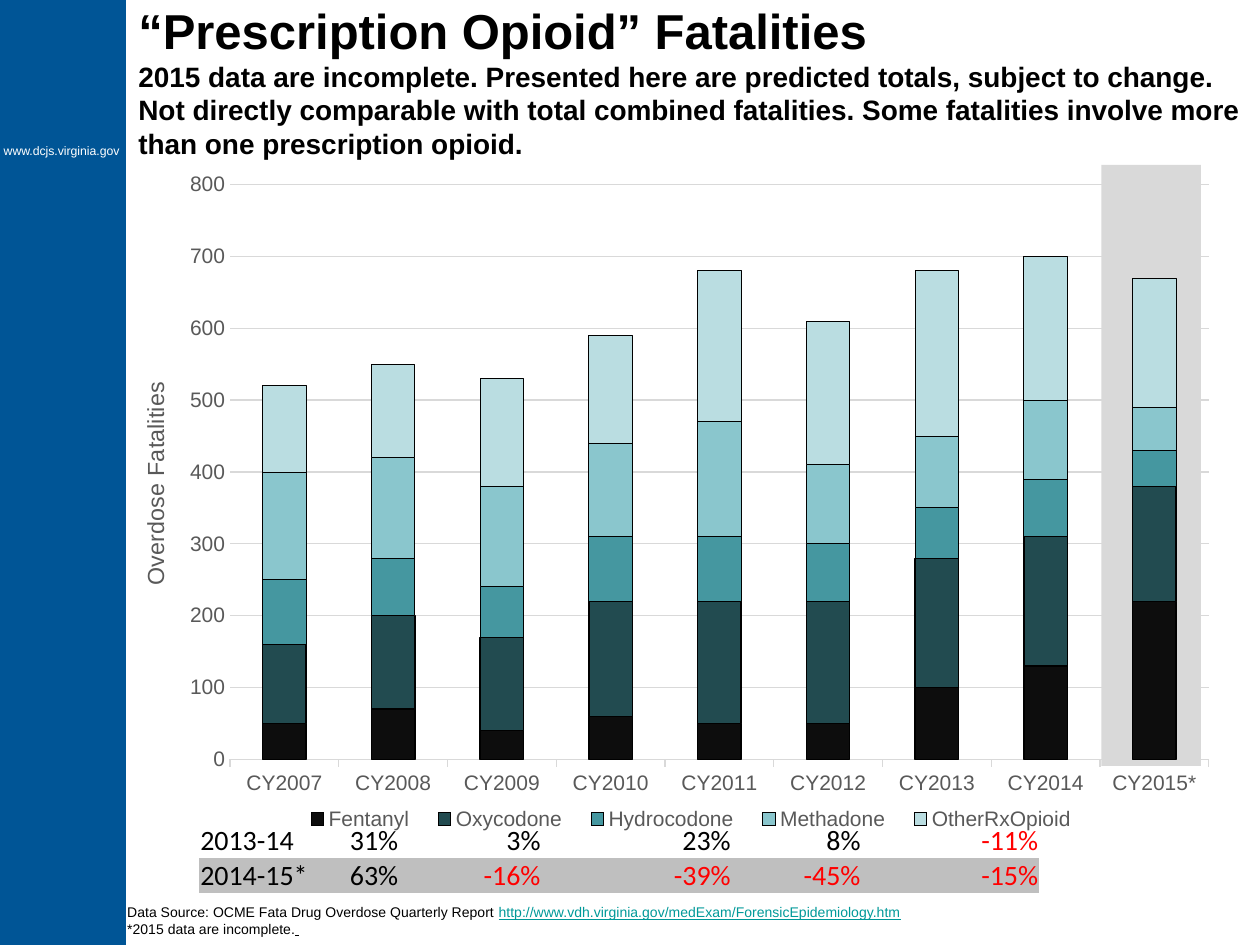
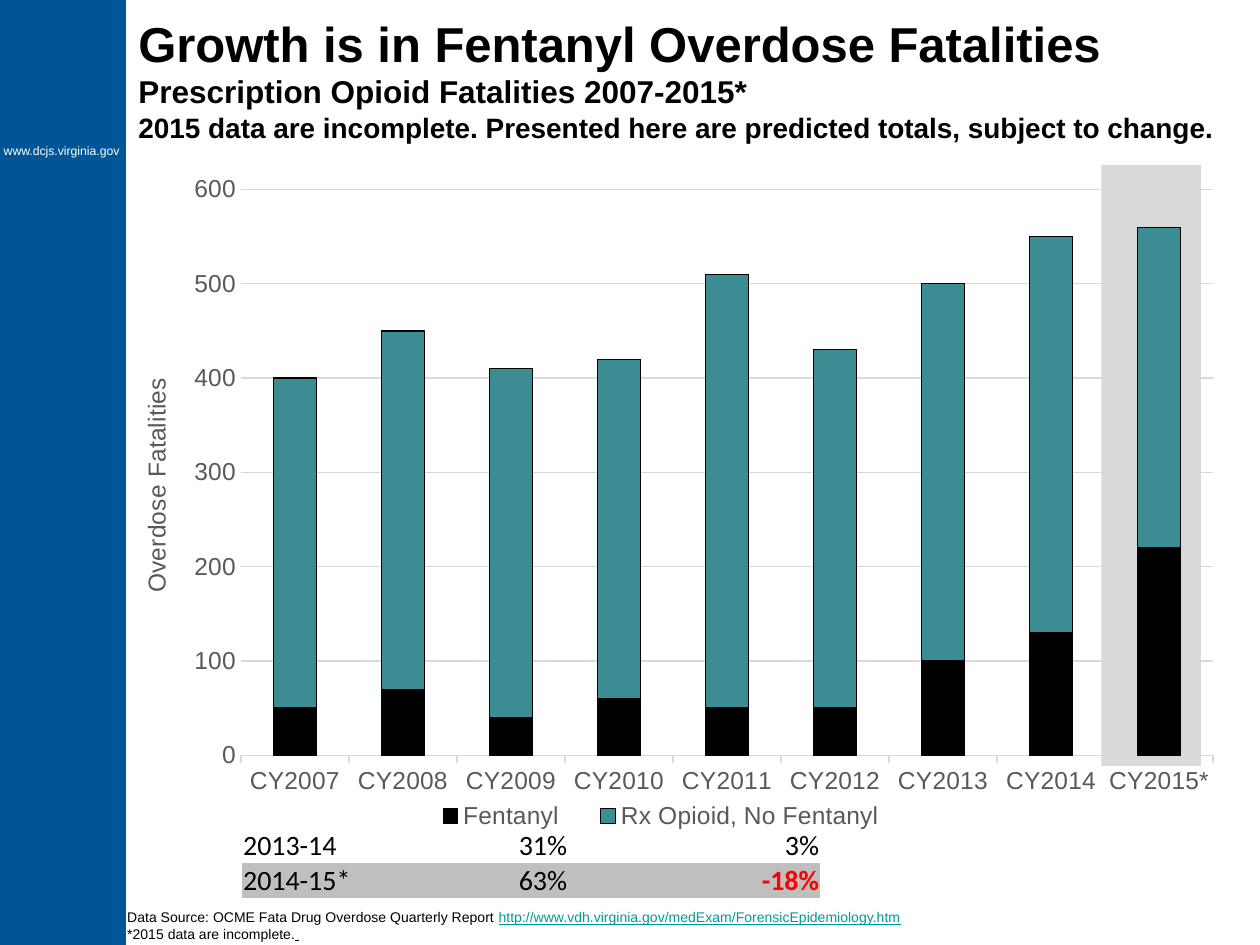
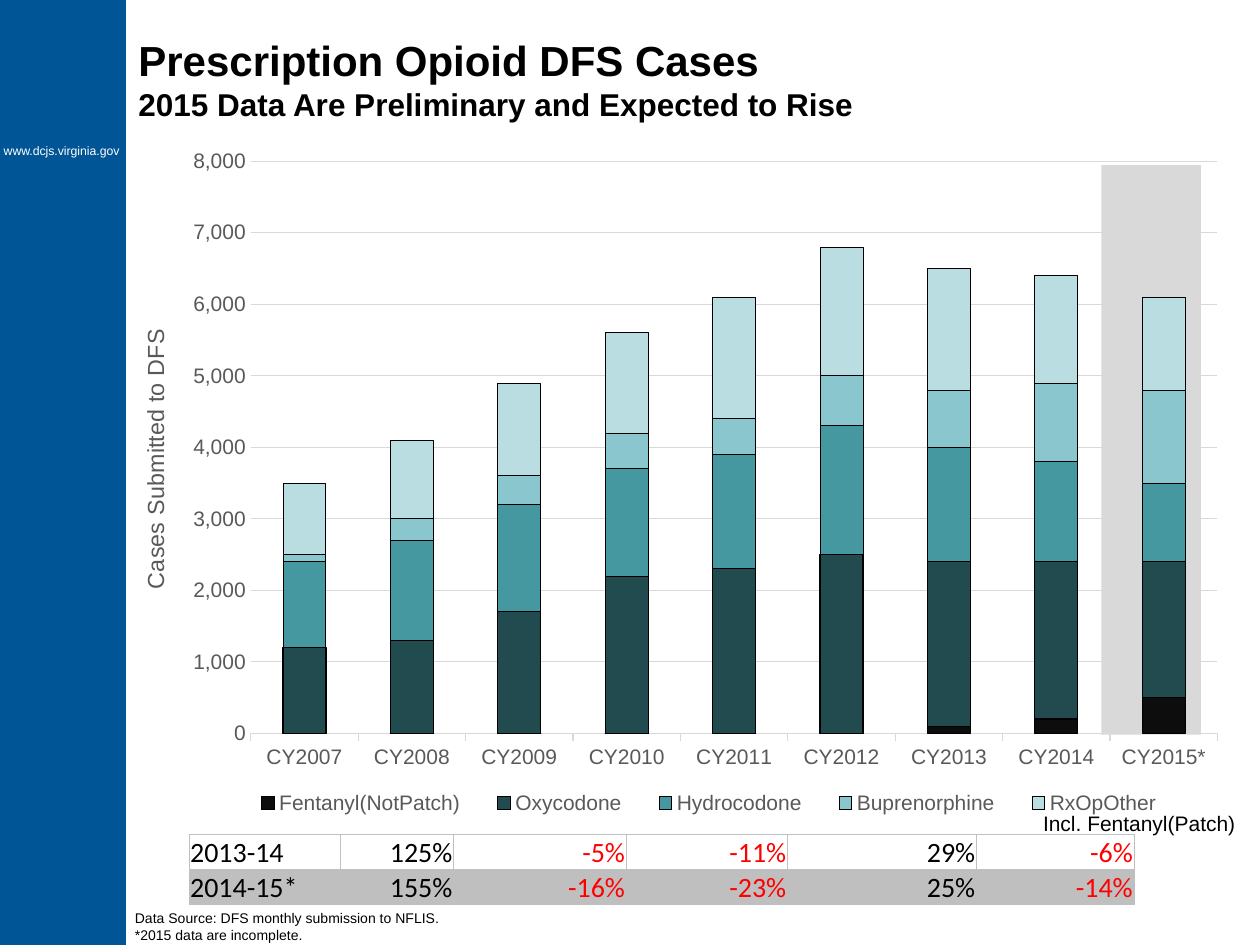
from lxml import etree
from pptx import Presentation
from pptx.chart.data import CategoryChartData
from pptx.dml.color import RGBColor
from pptx.enum.chart import XL_CHART_TYPE, XL_LEGEND_POSITION, XL_TICK_MARK
from pptx.enum.shapes import MSO_SHAPE
from pptx.enum.text import MSO_ANCHOR, PP_ALIGN
from pptx.oxml import parse_xml
from pptx.oxml.ns import nsdecls, qn
from pptx.util import Inches, Pt

STACKED = XL_CHART_TYPE.COLUMN_STACKED
LEGEND_BOTTOM = XL_LEGEND_POSITION.BOTTOM
TICK_NONE, TICK_OUT = XL_TICK_MARK.NONE, XL_TICK_MARK.OUTSIDE
RECTANGLE = MSO_SHAPE.RECTANGLE
TOP, MIDDLE, BOTTOM = MSO_ANCHOR.TOP, MSO_ANCHOR.MIDDLE, MSO_ANCHOR.BOTTOM
LEFT, RIGHT = PP_ALIGN.LEFT, PP_ALIGN.RIGHT

BLACK, WHITE, RED = "000000", "FFFFFF", "FF0000"
BAND_BLUE, LINK_TEAL = "005596", "009999"
HIGHLIGHT_GRAY, ROW_GRAY, BORDER_GRAY, LABEL_GRAY = "D9D9D9", "BFBFBF", "C0C0C0", "595959"
DRUG_COLORS = ["0D0D0D", "224B50", "4597A0", "8AC6CD", "BADDE1"]

YEARS = [f"CY{year}" for year in range(2007, 2015)] + ["CY2015*"]
FENTANYL = [50, 70, 40, 60, 50, 50, 100, 130, 220]
INCOMPLETE = "*2015 data are incomplete."
FATALITY_SOURCE = [
    [("Data Source: OCME Fata Drug Overdose Quarterly Report ", {}),
     ("http://www.vdh.virginia.gov/medExam/ForensicEpidemiology.htm",
      {"color": LINK_TEAL, "underline": True})],
    [(INCOMPLETE, {}), (" ", {"underline": True})],
]
CASE_SOURCE = [[("Data Source: DFS monthly submission to NFLIS.", {})], [(INCOMPLETE, {})]]

SLIDES = [
    {
        "title": [("“Prescription Opioid” Fatalities\n", {"size": 28}),
                  ("2015 data are incomplete. Presented here are predicted totals, subject to change. \n"
                   "Not directly comparable with total combined fatalities. "
                   "Some fatalities involve more than one prescription opioid.", {"size": 16})],
        "title_frame": (1, 0.01, 9, 1.25),
        "highlight_height": 4.77,
        "chart_frame": (1.08, 1.31, 8.67, 5.98),
        "plot": (0.086, 0.026, 0.896, 0.763),
        "legend": (2.29, 6.35, 6.38, 0.3),
        "axis_title": "Overdose Fatalities",
        "label_size": 12, "axis_title_size": 13.3,
        "maximum": 800, "step": 100, "number_format": "0",
        "colors": DRUG_COLORS,
        "series": {
            "Fentanyl": FENTANYL,
            "Oxycodone": [110, 130, 130, 160, 170, 170, 180, 180, 160],
            "Hydrocodone": [90, 80, 70, 90, 90, 80, 70, 80, 50],
            "Methadone": [150, 140, 140, 130, 160, 110, 100, 110, 60],
            "OtherRxOpioid": [120, 130, 150, 150, 210, 200, 230, 200, 180],
        },
        "table_at": (1.58, 6.53),
        "columns": [0.92, 0.67, 1.13, 1.51, 1.03, 1.41],
        "changes": [["2013-14", "31%", "3%", "23%", "8%", "-11%"],
                    ["2014-15*", "63%", "-16%", "-39%", "-45%", "-15%"]],
        "source": FATALITY_SOURCE,
        "source_frame": (1.01, 7.17, 8.53, 0.27),
    },
    {
        "title": [("Growth is in Fentanyl Overdose Fatalities\n", {"size": 28}),
                  ("Prescription Opioid Fatalities 2007-2015*\n", {"size": 18}),
                  ("2015 data are incomplete. Presented here are predicted totals, "
                   "subject to change.", {"size": 16})],
        "title_frame": (1, 0, 9, 1.25),
        "highlight_height": 4.77,
        "chart_frame": (1.08, 1.35, 8.67, 5.94),
        "plot": (0.096, 0.026, 0.89, 0.756),
        "legend": (3.25, 6.33, 4, 0.3),
        "axis_title": "Overdose Fatalities",
        "label_size": 14, "axis_title_size": 14,
        "maximum": 600, "step": 100, "number_format": "0",
        "colors": [BLACK, "3C8C93"],
        "series": {
            "Fentanyl": FENTANYL,
            "Rx Opioid, No Fentanyl": [350, 380, 370, 360, 460, 380, 400, 420, 340],
        },
        "table_at": (1.92, 6.57),
        "columns": [1.38, 1.21, 2],
        "changes": [["2013-14", "31%", "3%"], ["2014-15*", "63%", "-18%"]],
        "bold_change": "-18%",
        "source": FATALITY_SOURCE,
        "source_frame": (1.01, 7.21, 8.53, 0.27),
    },
    {
        "title": [("Prescription Opioid DFS Cases\n", {"size": 24}),
                  ("2015 Data Are Preliminary and Expected to Rise", {"size": 18})],
        "title_frame": (1, 0, 8.75, 1.25),
        "highlight_height": 4.52,
        "chart_frame": (1.08, 1.12, 8.67, 6.17),
        "plot": (0.105, 0.026, 0.885, 0.736),
        "legend": (1.83, 6.22, 7.59, 0.3),
        "axis_title": "Cases Submitted to DFS",
        "label_size": 12, "axis_title_size": 13.3,
        "maximum": 8000, "step": 1000, "number_format": "#,##0",
        "colors": DRUG_COLORS,
        "series": {
            "Fentanyl(NotPatch)": [0, 0, 0, 0, 0, 0, 100, 200, 500],
            "Oxycodone": [1200, 1300, 1700, 2200, 2300, 2500, 2300, 2200, 1900],
            "Hydrocodone": [1200, 1400, 1500, 1500, 1600, 1800, 1600, 1400, 1100],
            "Buprenorphine": [100, 300, 400, 500, 500, 700, 800, 1100, 1300],
            "RxOpOther": [1000, 1100, 1300, 1400, 1700, 1800, 1700, 1500, 1300],
        },
        "table_at": (1.5, 6.62),
        "columns": [1.2, 0.9, 1.37, 1.28, 1.5, 1.25],
        "changes": [["2013-14", "125%", "-5%", "-11%", "29%", "-6%"],
                    ["2014-15*", "155%", "-16%", "-23%", "25%", "-14%"]],
        "border": BORDER_GRAY,
        "legend_note": "Incl. Fentanyl(Patch)",
        "source": CASE_SOURCE,
        "source_frame": (1.07, 7.22, 8.68, 0.19),
    },
]


def rgb(value):
    return RGBColor.from_string(value)


def set_font(font, size=12, color=BLACK, name="Arial", bold=False, underline=False):
    font.name = name
    font.size = Pt(size)
    font.bold = bold
    font.underline = underline
    font.color.rgb = rgb(color)


def write_text(text_frame, paragraphs, align=LEFT, **text_format):
    for index, runs in enumerate(paragraphs):
        paragraph = text_frame.add_paragraph() if index else text_frame.paragraphs[0]
        paragraph.alignment = align
        for text, changes in runs:
            for line_index, line in enumerate(text.split("\n")):
                if line_index:
                    paragraph.add_line_break()
                if line:
                    run = paragraph.add_run()
                    run.text = line
                    set_font(run.font, **{**text_format, **changes})


def add_text_box(slide, frame, paragraphs, padded=False, anchor=TOP, wrap=True, **text_format):
    text_frame = slide.shapes.add_textbox(*map(Inches, frame)).text_frame
    text_frame.word_wrap = wrap
    text_frame.vertical_anchor = anchor
    if not padded:
        text_frame.margin_left = text_frame.margin_right = 0
        text_frame.margin_top = text_frame.margin_bottom = 0
    write_text(text_frame, paragraphs, **text_format)


def add_rectangle(slide, frame, color):
    shape = slide.shapes.add_shape(RECTANGLE, *map(Inches, frame))
    shape.shadow.inherit = False
    shape.fill.solid()
    shape.fill.fore_color.rgb = rgb(color)
    shape.line.fill.background()


def make_layout(fractions, inner=False):
    layout = etree.Element(qn("c:layout"))
    manual = etree.SubElement(layout, qn("c:manualLayout"))
    settings = [("layoutTarget", "inner")] if inner else []
    settings += [("xMode", "edge"), ("yMode", "edge")]
    settings += zip("xywh", fractions)
    for tag, value in settings:
        etree.SubElement(manual, qn(f"c:{tag}")).set("val", str(value))
    return layout


def no_fill_properties():
    return parse_xml(f'<c:spPr {nsdecls("c", "a")}><a:noFill/><a:ln><a:noFill/></a:ln></c:spPr>')


def place_chart_parts(chart, content):
    chart_space = chart._chartSpace
    chart_element = chart_space.find(qn("c:chart"))
    plot_area = chart_element.find(qn("c:plotArea"))
    legend = chart_element.find(qn("c:legend"))
    for parent in (plot_area, legend):
        for layout in parent.findall(qn("c:layout")):
            parent.remove(layout)
    plot_area.insert(0, make_layout(content["plot"], inner=True))
    left, top, width, height = content["chart_frame"]
    x, y, legend_width, legend_height = content["legend"]
    fractions = ((x - left) / width, (y - top) / height, legend_width / width, legend_height / height)
    legend.find(qn("c:legendPos")).addnext(make_layout([round(part, 3) for part in fractions]))
    plot_area.append(no_fill_properties())
    chart_element.addnext(no_fill_properties())


def add_yearly_chart(slide, content):
    data = CategoryChartData()
    data.categories = YEARS
    for name, values in content["series"].items():
        data.add_series(name, values)
    chart = slide.shapes.add_chart(STACKED, *map(Inches, content["chart_frame"]), data).chart
    label_format = {"size": content["label_size"], "color": LABEL_GRAY}
    set_font(chart.font, **label_format)
    chart.has_title = False
    chart.has_legend = True
    chart.legend.position = LEGEND_BOTTOM
    chart.legend.include_in_layout = False
    set_font(chart.legend.font, **label_format)

    plot = chart.plots[0]
    plot.gap_width, plot.overlap, plot.vary_by_categories = 150, 100, False
    for index, (series, color) in enumerate(zip(plot.series, content["colors"])):
        series.format.fill.solid()
        series.format.fill.fore_color.rgb = rgb(color)
        series.format.line.color.rgb = rgb(BLACK)
        series.format.line.width = Pt(0.75 if index < 2 else 0.5)

    years, values = chart.category_axis, chart.value_axis
    years.major_tick_mark, values.major_tick_mark = TICK_OUT, TICK_NONE
    values.has_major_gridlines = True
    for line in (years.format.line, values.major_gridlines.format.line):
        line.color.rgb = rgb(HIGHLIGHT_GRAY)
        line.width = Pt(0.75)
    for axis in (years, values):
        axis.minor_tick_mark = TICK_NONE
        set_font(axis.tick_labels.font, **label_format)
    values.format.line.fill.background()
    values.minimum_scale, values.maximum_scale = 0, content["maximum"]
    values.major_unit = content["step"]
    values.tick_labels.number_format = content["number_format"]
    values.tick_labels.number_format_is_linked = False
    title_frame = values.axis_title.text_frame
    title_frame._txBody.bodyPr.set("rot", "-5400000")
    title_frame._txBody.bodyPr.set("vert", "horz")
    write_text(title_frame, [[(content["axis_title"], {})]], align=None,
               size=content["axis_title_size"], color=LABEL_GRAY)
    place_chart_parts(chart, content)


def set_borders(cell, color):
    properties = cell._tc.get_or_add_tcPr()
    fill = f'<a:solidFill><a:srgbClr val="{color}"/></a:solidFill>' if color else "<a:noFill/>"
    for index, side in enumerate("LRTB"):
        border = parse_xml(f'<a:ln{side} {nsdecls("a")} w="6350">{fill}</a:ln{side}>')
        properties.insert(index, border)


def add_change_table(slide, content):
    widths, rows = content["columns"], content["changes"]
    row_height = 0.28
    frame = (*content["table_at"], sum(widths), row_height * len(rows))
    table = slide.shapes.add_table(len(rows), len(widths), *map(Inches, frame)).table
    table.first_row = table.horz_banding = False
    for column, width in zip(table.columns, widths):
        column.width = Inches(width)
    for row_index, row in enumerate(rows):
        table.rows[row_index].height = Inches(row_height)
        for column_index, text in enumerate(row):
            cell = table.cell(row_index, column_index)
            cell.margin_left = cell.margin_right = cell.margin_top = Inches(0.01)
            cell.margin_bottom = 0
            cell.vertical_anchor = BOTTOM
            if row_index:
                cell.fill.solid()
                cell.fill.fore_color.rgb = rgb(ROW_GRAY)
            else:
                cell.fill.background()
            set_borders(cell, content.get("border"))
            write_text(cell.text_frame, [[(text, {})]], align=RIGHT if column_index else LEFT,
                       size=16, name="Calibri", color=RED if text.startswith("-") else BLACK,
                       bold=text == content.get("bold_change"))


def add_slide(presentation, content):
    slide = presentation.slides.add_slide(presentation.slide_layouts[6])
    add_rectangle(slide, (0, 0, 1, 7.5), BAND_BLUE)
    add_text_box(slide, (0.03, 1.14, 0.93, 0.12), [[("www.dcjs.virginia.gov", {})]],
                 wrap=False, size=7, color=WHITE)
    add_rectangle(slide, (8.74, 1.31, 0.79, content["highlight_height"]), HIGHLIGHT_GRAY)
    add_text_box(slide, content["title_frame"], [content["title"]],
                 padded=True, anchor=MIDDLE, bold=True)
    add_yearly_chart(slide, content)
    add_change_table(slide, content)
    if "legend_note" in content:
        add_text_box(slide, (8.18, 6.38, 1.74, 0.3), [[(content["legend_note"], {})]],
                     padded=True, wrap=False)
    add_text_box(slide, content["source_frame"], content["source"], size=8)


def main():
    presentation = Presentation()
    presentation.slide_width, presentation.slide_height = Inches(10), Inches(7.5)
    for content in SLIDES:
        add_slide(presentation, content)
    presentation.save("out.pptx")


if __name__ == "__main__":
    main()
